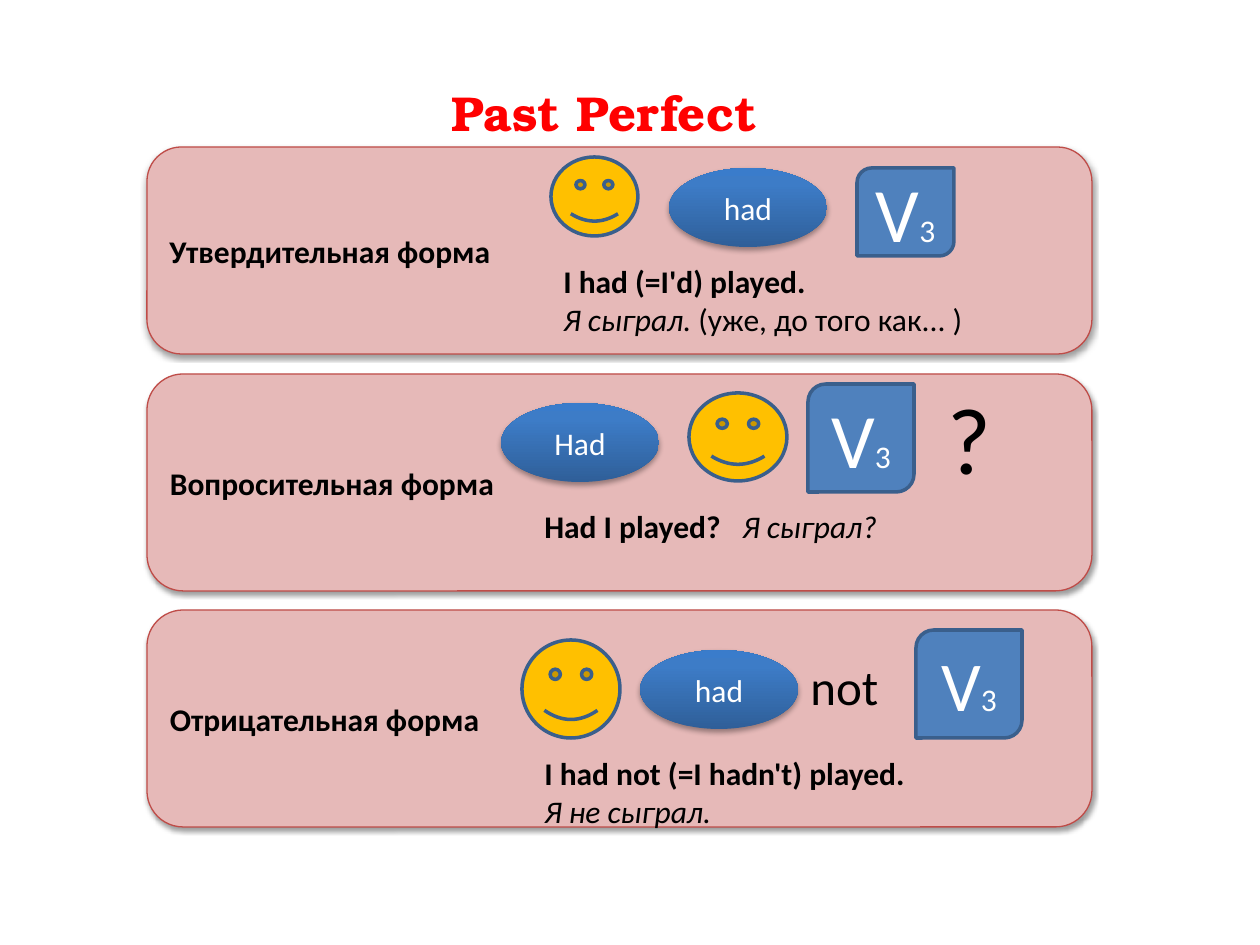
from copy import deepcopy

from lxml import etree
from pptx import Presentation
from pptx.dml.color import RGBColor
from pptx.enum.shapes import MSO_SHAPE
from pptx.enum.text import MSO_ANCHOR, PP_ALIGN
from pptx.oxml.ns import qn
from pptx.util import Emu, Pt

CARD = MSO_SHAPE.ROUNDED_RECTANGLE
SMILEY = MSO_SHAPE.SMILEY_FACE
OVAL = MSO_SHAPE.OVAL
VERB_BOX = MSO_SHAPE.ROUND_2_DIAG_RECTANGLE
LEFT, CENTER = PP_ALIGN.LEFT, PP_ALIGN.CENTER
TOP, MIDDLE = MSO_ANCHOR.TOP, MSO_ANCHOR.MIDDLE

PX = 914400 / 126
BODY_FONT, TITLE_FONT = "Calibri", "TeX Gyre Bonum"
BLACK, WHITE, RED, OUTLINE = "000000", "FFFFFF", "FF0000", "3A5F8C"
CARD_LEFT, CARD_WIDTH = 147, 945
EXAMPLE_TAB = 198

FORMS = [
    {"label": "Утвердительная форма", "top": 147, "height": 207,
     "smiley": (404, 10, 87, 79), "auxiliary": ("had", 522, 21),
     "verb": (710, 21, 97, 88), "verb_size": 44, "extra": None,
     "example_box": (404, 109, 452, 127),
     "example": [[("I had (=I'd) played.", True, False)],
                 [("Я сыграл.", False, True),
                  (" (уже, до того как... )", False, False)]]},
    {"label": "Вопросительная форма", "top": 374, "height": 217,
     "smiley": (542, 19, 98, 88), "auxiliary": ("Had", 354, 29),
     "verb": (661, 10, 106, 108), "verb_size": 44,
     "extra": ("?", 54, (788, 0, 69, 127)),
     "example_box": (385, 127, 542, 89),
     "example": [[("Had I played?\t", True, False),
                  ("Я сыграл?", False, True)]]},
    {"label": "Отрицательная форма", "top": 610, "height": 217,
     "smiley": (375, 30, 98, 98), "auxiliary": ("had", 493, 40),
     "verb": (769, 20, 106, 108), "verb_size": 40,
     "extra": ("not", 28, (651, 40, 118, 72)),
     "example_box": (385, 138, 532, 127),
     "example": [[("I had not (=I hadn't) played.", True, False)],
                 [("Я не сыграл.", False, True)]]},
]


def px(length):
    """Turn pixels into EMU."""
    return Emu(round(length * PX))


def color(value):
    """Turn a hex string into a colour."""
    return RGBColor.from_string(value)


def place(origin, box):
    """Return the EMU box for a pixel box relative to an origin."""
    left, top, width, height = box
    return [px(n) for n in (origin[0] + left, origin[1] + top, width, height)]


def style(font, size, value, bold=False, name=BODY_FONT):
    """Set the face, size, weight and colour of a font."""
    font.name, font.size, font.bold = name, Pt(size), bold
    font.color.rgb = color(value)


def write(shape, text, size, value, bold=False, align=CENTER, anchor=MIDDLE):
    """Write one evenly formatted paragraph in a shape."""
    frame = shape.text_frame
    frame.word_wrap, frame.vertical_anchor = True, anchor
    paragraph = frame.paragraphs[0]
    paragraph.text, paragraph.alignment = text, align
    style(paragraph.font, size, value, bold)


def add_figure(slide, kind, box, fill=None, line=None, width=2):
    """Add a preset shape without shadow."""
    shape = slide.shapes.add_shape(kind, *box)
    shape.shadow.inherit = False
    if fill:
        shape.fill.solid()
        shape.fill.fore_color.rgb = color(fill)
    if line:
        shape.line.color.rgb = color(line)
        shape.line.width = Pt(width)
    else:
        shape.line.fill.background()
    return shape


def add_shadow(shape, distance, alpha):
    """Give a shape a soft shadow straight below it."""
    effects = shape._element.spPr.find(qn("a:effectLst"))
    shadow = etree.SubElement(effects, qn("a:outerShdw"), blurRad="40000",
                              dist=str(distance), dir="5400000", rotWithShape="0")
    tint = etree.SubElement(shadow, qn("a:srgbClr"), val=BLACK)
    etree.SubElement(tint, qn("a:alpha"), val=str(alpha * 1000))


def add_auxiliary(slide, origin, text, left, top):
    """Add the gradient oval that holds the auxiliary verb."""
    oval = add_figure(slide, OVAL, place(origin, (left, top, 158, 79)))
    oval.fill.gradient()
    oval.fill.gradient_angle = 90
    for stop, value in zip(oval.fill.gradient_stops, ("2F5F99", "3A7CCB")):
        stop.color.rgb = color(value)
    stops = oval._element.spPr.find(qn("a:gradFill")).find(qn("a:gsLst"))
    middle = deepcopy(stops[0])
    middle.set("pos", "80000")
    middle[0].set("val", "3D7CC7")
    stops.insert(1, middle)
    add_shadow(oval, 23000, 35)
    write(oval, text, 18, WHITE)


def add_verb(slide, box, size):
    """Add the box with the third verb form."""
    shape = add_figure(slide, VERB_BOX, box, "4F81BD", OUTLINE)
    write(shape, "V", size, WHITE)
    number = shape.text_frame.paragraphs[0].add_run()
    number.text = "3"
    number.font.size = Pt(18)


def add_example(slide, box, lines):
    """Add the example sentences with bold and italic runs."""
    frame = slide.shapes.add_textbox(*box).text_frame
    frame.word_wrap = True
    for index, parts in enumerate(lines):
        paragraph = frame.add_paragraph() if index else frame.paragraphs[0]
        if any("\t" in text for text, _, _ in parts):
            tabs = etree.SubElement(paragraph._p.get_or_add_pPr(), qn("a:tabLst"))
            etree.SubElement(tabs, qn("a:tab"), pos=str(px(EXAMPLE_TAB)), algn="l")
        for text, bold, italic in parts:
            run = paragraph.add_run()
            run.text = text
            style(run.font, 18, BLACK, bold)
            run.font.italic = italic


def add_form(slide, form):
    """Add one card with its label, word pattern and example."""
    origin = (CARD_LEFT, form["top"])
    card = add_figure(slide, CARD, place(origin, (0, 0, CARD_WIDTH, form["height"])),
                      "E6B9B8", "BF4C48", 0.75)
    add_shadow(card, 20000, 38)
    write(card, form["label"], 18, BLACK, bold=True, align=LEFT)
    add_figure(slide, SMILEY, place(origin, form["smiley"]), "FFC000", OUTLINE)
    add_verb(slide, place(origin, form["verb"]), form["verb_size"])
    if form["extra"]:
        text, size, box = form["extra"]
        word = slide.shapes.add_textbox(*place(origin, box))
        write(word, text, size, BLACK, align=LEFT, anchor=TOP)
    add_example(slide, place(origin, form["example_box"]), form["example"])
    add_auxiliary(slide, origin, *form["auxiliary"])


def add_title(slide, box):
    """Place and format the slide title."""
    title = slide.shapes.title
    title.left, title.top, title.width, title.height = box
    write(title, "Past Perfect", 28, RED, bold=True, anchor=TOP)
    style(title.text_frame.paragraphs[0].font, 28, RED, True, TITLE_FONT)


def main():
    """Build and save the presentation."""
    presentation = Presentation()
    presentation.slide_width, presentation.slide_height = px(1260), px(945)
    slide = presentation.slides.add_slide(presentation.slide_layouts[5])
    add_title(slide, place((0, 0), (437, 76, 335, 72)))
    for form in FORMS:
        add_form(slide, form)
    presentation.save("out.pptx")


if __name__ == "__main__":
    main()
